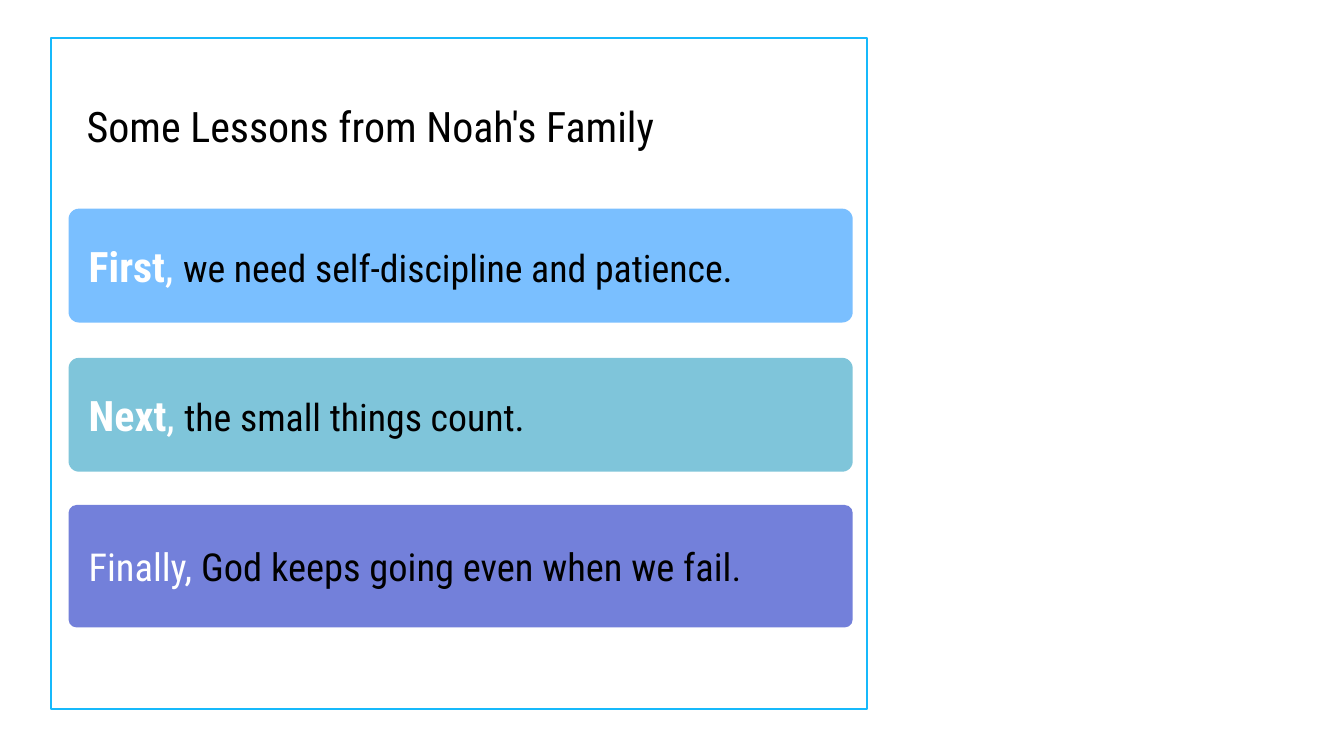
from dataclasses import dataclass

import pptx
import pptx.dml.color
import pptx.enum.shapes
import pptx.enum.text
import pptx.util

Pt = pptx.util.Pt
Shape = pptx.enum.shapes.MSO_SHAPE
FONT = "Roboto Condensed"
BLACK, WHITE = "000000", "FFFFFF"
CARD_LEFT, CARD_WIDTH = 97.9, 1120.3
TEXT_LEFT, TEXT_HIGH = 126.7, 72.5


@dataclass
class Run:
    text: str
    size: float
    color: str
    bold: bool = False


@dataclass
class Card:
    top: float
    height: float
    fill: str
    round: float
    text_top: float
    text_width: float
    runs: list[Run]
    spacing: float = 1.0


CARDS = [
    Card(298.1, 162.7, "7ABFFF", 0.092, 343.4, 964, [
        Run("First", 60, WHITE, True),
        Run(", ", 60, WHITE),
        Run("we need self-discipline and patience.", 54, BLACK)]),
    Card(511.2, 162.7, "7FC5DA", 0.092, 556.6, 636, [
        Run("Next", 60, WHITE, True),
        Run(", ", 60, WHITE),
        Run("the small things count.", 54, BLACK)]),
    Card(721.4, 175, "7380DA", 0.066, 769, 975.6, [
        Run("Finally, ", 55, WHITE),
        Run("God keeps going even when we fail", 55, BLACK),
        Run(".", 50, BLACK)], 1.1),
]


def rgb(color: str) -> pptx.dml.color.RGBColor:
    return pptx.dml.color.RGBColor.from_string(color)


def add_text(slide, left: float, top: float, width: float,
             runs: list[Run], spacing: float = 1.0) -> None:
    box = slide.shapes.add_textbox(Pt(left), Pt(top), Pt(width), Pt(TEXT_HIGH))
    frame = box.text_frame
    frame.margin_left = frame.margin_right = 0
    frame.margin_top = frame.margin_bottom = 0
    frame.word_wrap = False
    frame.auto_size = pptx.enum.text.MSO_AUTO_SIZE.SHAPE_TO_FIT_TEXT
    frame.vertical_anchor = pptx.enum.text.MSO_ANCHOR.MIDDLE
    line = frame.paragraphs[0]
    line.line_spacing = spacing
    for item in runs:
        run = line.add_run()
        run.text = item.text
        run.font.name = FONT
        run.font.size = Pt(item.size)
        run.font.bold = item.bold
        run.font.color.rgb = rgb(item.color)


def add_frame(slide) -> None:
    frame = slide.shapes.add_shape(
        Shape.RECTANGLE, Pt(73.4), Pt(54), Pt(1165), Pt(958.3))
    frame.shadow.inherit = False
    frame.fill.background()
    frame.line.color.rgb = rgb("17B9FB")
    frame.line.width = Pt(3)


def add_card(slide, card: Card) -> None:
    shape = slide.shapes.add_shape(
        Shape.ROUNDED_RECTANGLE, Pt(CARD_LEFT), Pt(card.top),
        Pt(CARD_WIDTH), Pt(card.height))
    shape.adjustments[0] = card.round
    shape.shadow.inherit = False
    shape.fill.solid()
    shape.fill.fore_color.rgb = rgb(card.fill)
    shape.line.fill.background()
    add_text(slide, TEXT_LEFT, card.text_top, card.text_width,
             card.runs, card.spacing)


def main() -> None:
    deck = pptx.Presentation()
    deck.slide_width, deck.slide_height = Pt(1920), Pt(1080)
    slide = deck.slides.add_slide(deck.slide_layouts[6])
    add_frame(slide)
    add_text(slide, 123.8, 144, 829.4,
             [Run("Some Lessons from Noah's Family", 60, BLACK)])
    for card in CARDS:
        add_card(slide, card)
    deck.save("out.pptx")


if __name__ == "__main__":
    main()
